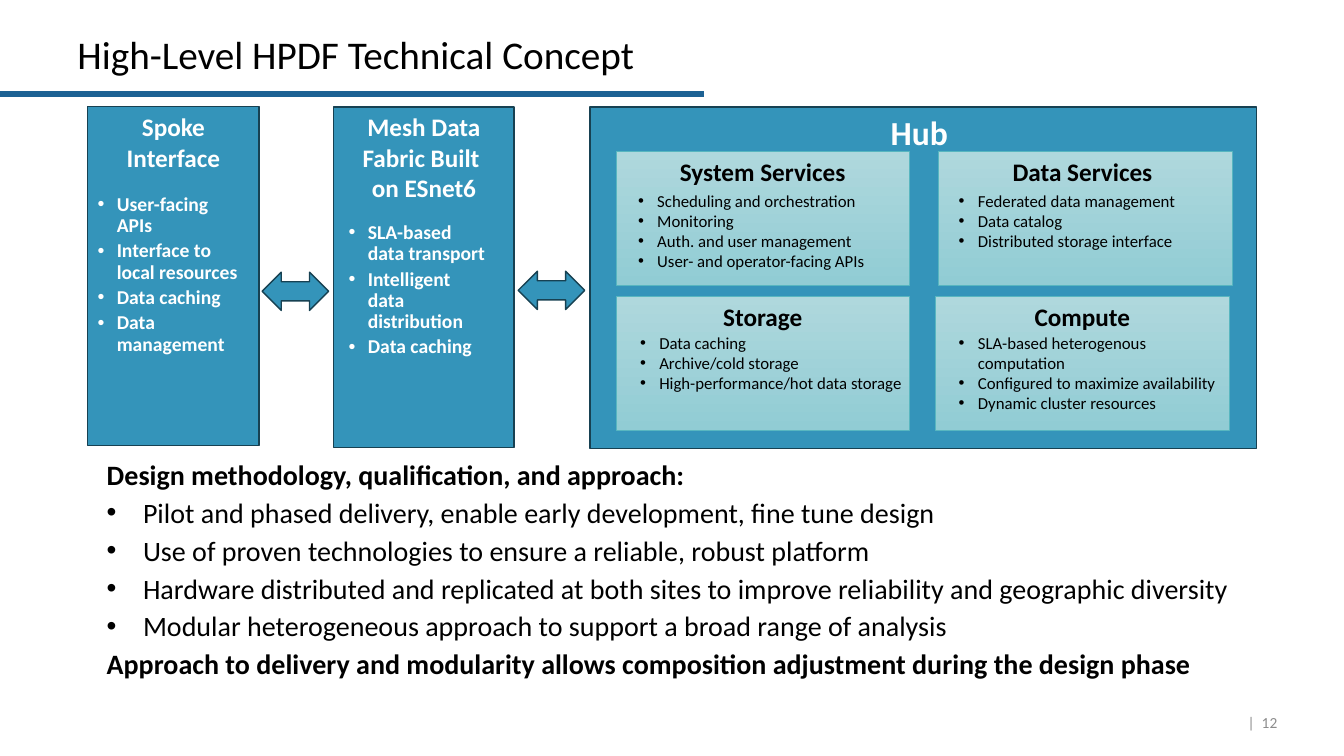
from lxml import etree
from pptx import Presentation
from pptx import util as u
from pptx.dml import color
from pptx.enum import shapes, text
from pptx.oxml import ns

TITLE = "High-Level HPDF Technical Concept"
PAGE = "|  12"
HUB = "Hub"
PANELS = [
    (["Spoke", "Interface"],
     ["User-facing APIs", "Interface to local resources", "Data caching", "Data management"]),
    (["Mesh Data", "Fabric Built \von ESnet6"],
     ["SLA-based data transport", "Intelligent data distribution", "Data caching"]),
]
CARDS = [
    ("System Services", ["Scheduling and orchestration", "Monitoring",
                         "Auth. and user management", "User- and operator-facing APIs"]),
    ("Data\u00a0Services\u00a0", ["Federated data management", "Data catalog",
                        "Distributed storage interface"]),
    ("Storage", ["Data caching", "Archive/cold storage", "High-performance/hot data storage"]),
    ("Compute", ["SLA-based heterogenous computation", "Configured to maximize availability",
                 "Dynamic cluster resources"]),
]
LEAD = "Design methodology, qualification, and approach:"
POINTS = [
    "Pilot and phased delivery, enable early development, fine tune design",
    "Use of proven technologies to ensure a reliable, robust platform",
    "Hardware distributed and replicated at both sites to improve reliability and geographic diversity",
    "Modular heterogeneous approach to support a broad range of analysis",
]
CLOSE = "Approach to delivery and modularity allows composition adjustment during the design phase\u00a0"

THEME = {
    "font": "Calibri", "ink": "000000", "white": "FFFFFF", "grey": "8C8C8C",
    "rule": "1D6294", "blue": "3494BA", "edge": "174152",
    "pale": ("AFD8DD", "91CCD4"), "rim": "58B6C0",
    "title": 28, "hub": 24, "body": 20, "head": 18, "list": 14, "note": 12, "page": 11,
}
WIDE, HIGH = 13.33, 7.5
TOP = 1.06
PANEL_COLS = [(0.87, 1.7, 3.36), (3.31, 1.79, 3.38)]
PANEL_LISTS = [(0.87, 1.88, 1.66, 1.75), (3.36, 2.16, 1.58, 1.46)]
ARROWS = [(2.6, 2.7), (5.14, 2.69)]
HUB_BOX = (5.85, TOP, 6.61, 3.39)
CARD_COLS = [[6.11, 9.31], [6.11, 9.28]]
NOTE_COLS = [[6.23, 9.41], [6.25, 9.41]]
CARD_ROWS = [1.5, 2.94]
NOTE_ROWS = [1.84, 3.25]
CARD_W, CARD_H = 2.91, 1.33

deck = Presentation()
deck.slide_width, deck.slide_height = u.Inches(WIDE), u.Inches(HIGH)
slide = deck.slides.add_slide(deck.slide_layouts[6])


def rgb(name):
    return color.RGBColor.from_string(THEME.get(name, name))


def spot(box):
    return [u.Inches(n) for n in box]


def write(frame, rows, size, ink, bold=False, align=None, mark=None, lead=None, gap=0):
    frame.word_wrap = True
    for i, row in enumerate(rows):
        para = frame.paragraphs[0] if i == 0 else frame.add_paragraph()
        line, heavy, dent = row if isinstance(row, tuple) else (row, bold, mark)
        if dent:
            left, hang = dent
            props = para._p.get_or_add_pPr()
            props.set("marL", str(u.Inches(left)))
            props.set("indent", str(u.Inches(hang)))
            if hang:
                face = etree.SubElement(props, ns.qn("a:buFont"))
                face.set("typeface", "Arial")
                etree.SubElement(props, ns.qn("a:buChar")).set("char", "•")
        para.alignment = align
        if lead:
            para.line_spacing = lead
        if gap and i:
            para.space_before = u.Pt(gap)
        for j, part in enumerate(line.split("\v")):
            if j:
                para.add_line_break()
            run = para.add_run()
            run.text = part
            font = run.font
            font.name, font.size, font.bold = THEME["font"], u.Pt(THEME[size]), heavy
            font.color.rgb = rgb(ink)


def label(box, rows, size, ink, anchor=text.MSO_ANCHOR.TOP, **style):
    frame = slide.shapes.add_textbox(*spot(box)).text_frame
    frame.vertical_anchor = anchor
    write(frame, rows, size, ink, **style)
    return frame


def block(kind, box, fill, edge, width, rows=(), size="head", ink="white"):
    form = slide.shapes.add_shape(kind, *spot(box))
    form.shadow.inherit = False
    if isinstance(fill, tuple):
        form.fill.gradient()
        form.fill.gradient_angle = 270
        for stop, tone in zip(form.fill.gradient_stops, fill):
            stop.color.rgb = rgb(tone)
    else:
        form.fill.solid()
        form.fill.fore_color.rgb = rgb(fill)
    form.line.color.rgb = rgb(edge)
    form.line.width = u.Pt(width)
    form.text_frame.vertical_anchor = text.MSO_ANCHOR.TOP
    write(form.text_frame, rows, size, ink, bold=True, align=text.PP_ALIGN.CENTER)


RECT = shapes.MSO_SHAPE.RECTANGLE
BULLET = (0.19, -0.19)

rule = slide.shapes.add_connector(shapes.MSO_CONNECTOR.STRAIGHT, *spot((0, 0.93, 6.98, 0.93)))
rule.line.color.rgb = rgb("rule")
rule.line.width = u.Pt(4.5)
etree.SubElement(rule._element.spPr, ns.qn("a:effectLst"))

label((0.67, 0.28, 11, 0.54), [TITLE], "title", "ink", text.MSO_ANCHOR.BOTTOM, lead=0.9)

block(RECT, HUB_BOX, "blue", "edge", 1, [HUB + " "], "hub")
for (head, items), (x, w, h), area in zip(PANELS, PANEL_COLS, PANEL_LISTS):
    block(RECT, (x, TOP, w, h), "blue", "edge", 1, head)
    label(area, items, "list", "white", bold=True, mark=BULLET, lead=0.9, gap=3)
for x, y in ARROWS:
    block(shapes.MSO_SHAPE.LEFT_RIGHT_ARROW, (x, y, 0.66, 0.38), "blue", "edge", 1)

for i, (head, items) in enumerate(CARDS):
    row, col = divmod(i, 2)
    block(RECT, (CARD_COLS[row][col], CARD_ROWS[row], CARD_W, CARD_H),
          THEME["pale"], "rim", 0.5, [head], ink="ink")
    label((NOTE_COLS[row][col], NOTE_ROWS[row], CARD_W, 0.1 + 0.2 * len(items)),
          items, "note", "ink", mark=BULLET)

flat, hung = (0.14, 0), (0.5, -0.36)
body = [(LEAD, True, flat)] + [(p, False, hung) for p in POINTS] + [(CLOSE, True, flat)]
label((0.82, 4.49, 11.69, 2.45), body, "body", "ink", gap=3)

page = label((12.25, 6.97, 0.42, 0.4), [PAGE], "page", "grey", text.MSO_ANCHOR.MIDDLE,
             align=text.PP_ALIGN.RIGHT)
page.margin_left = page.margin_right = 0
page.word_wrap = False

deck.save("out.pptx")
